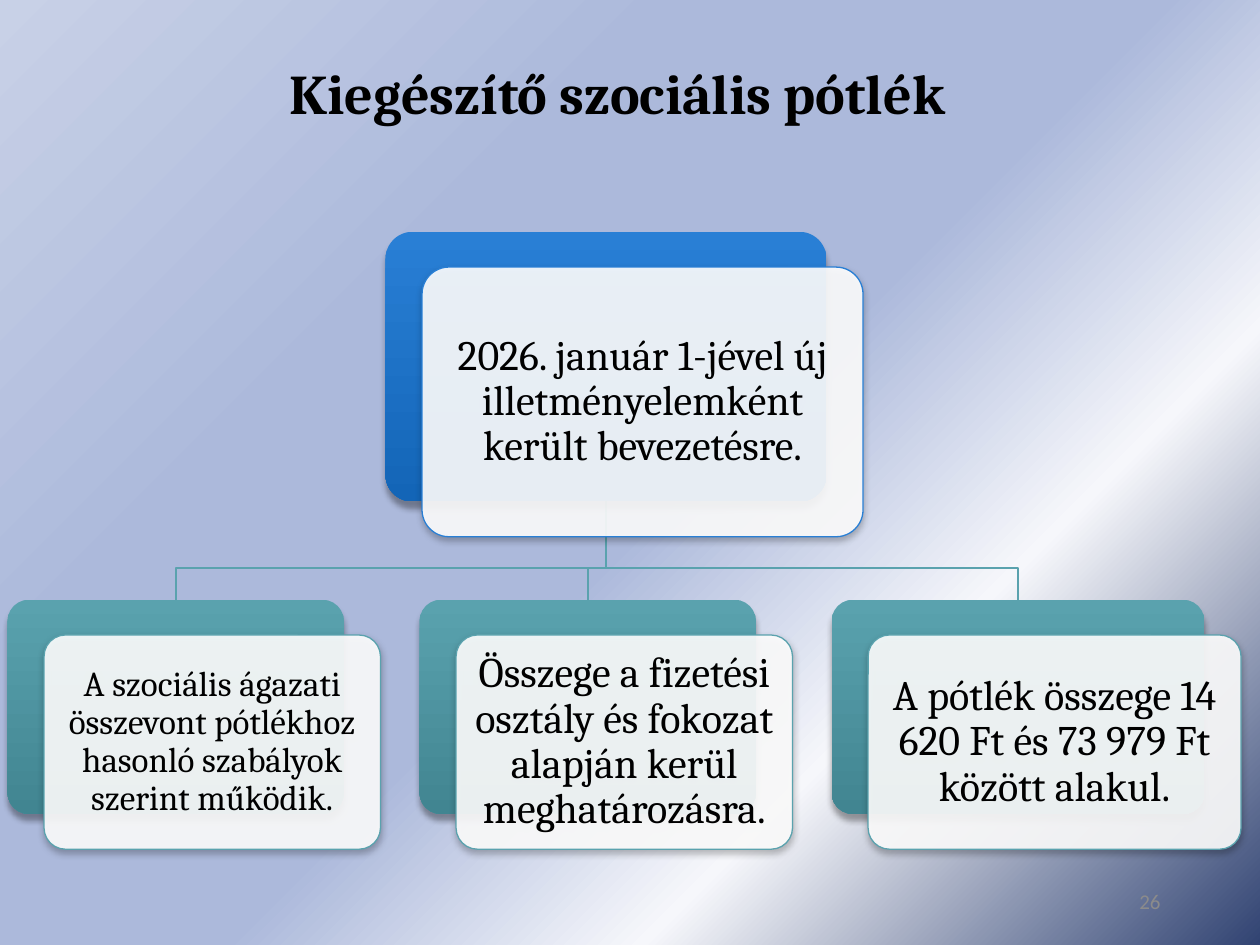
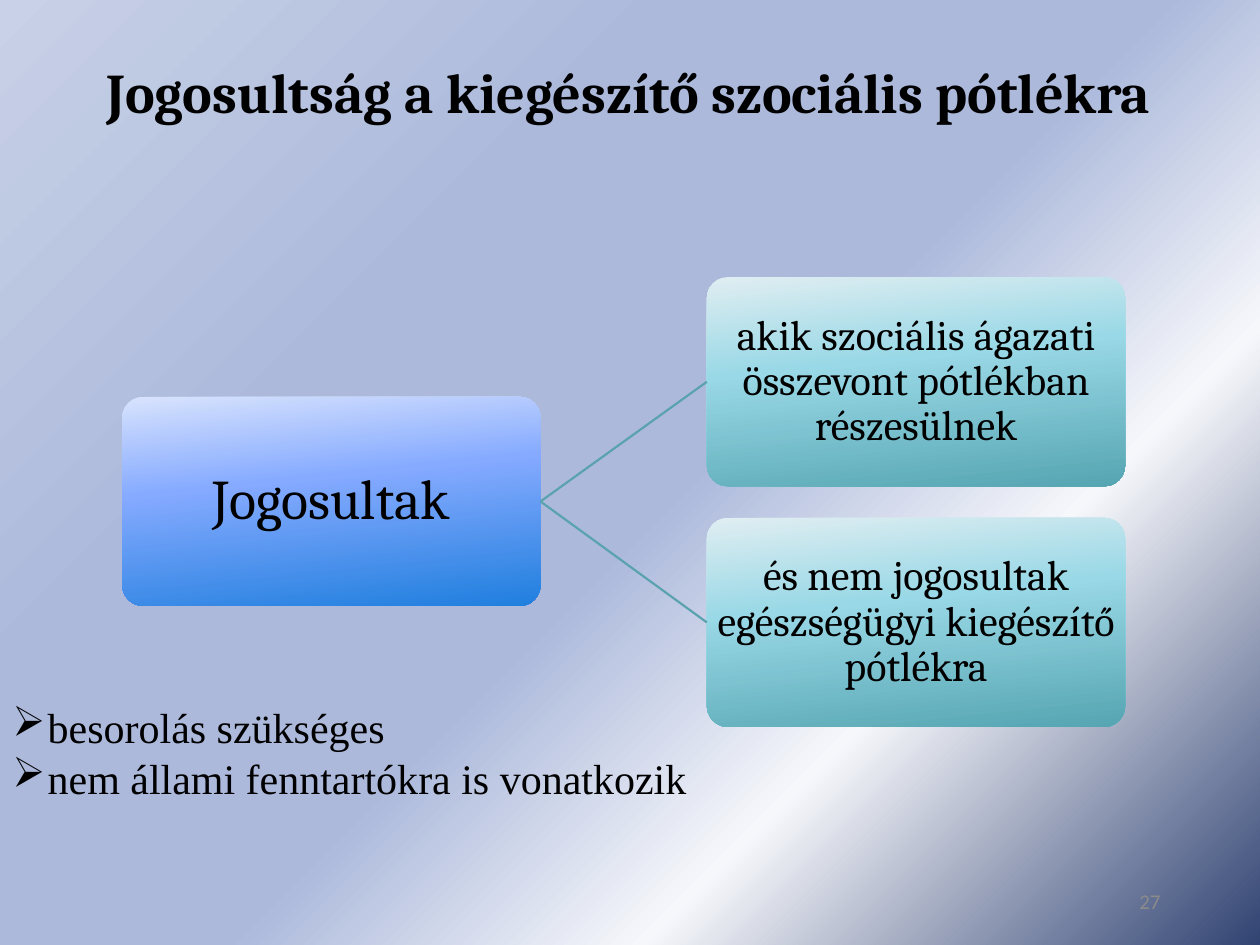
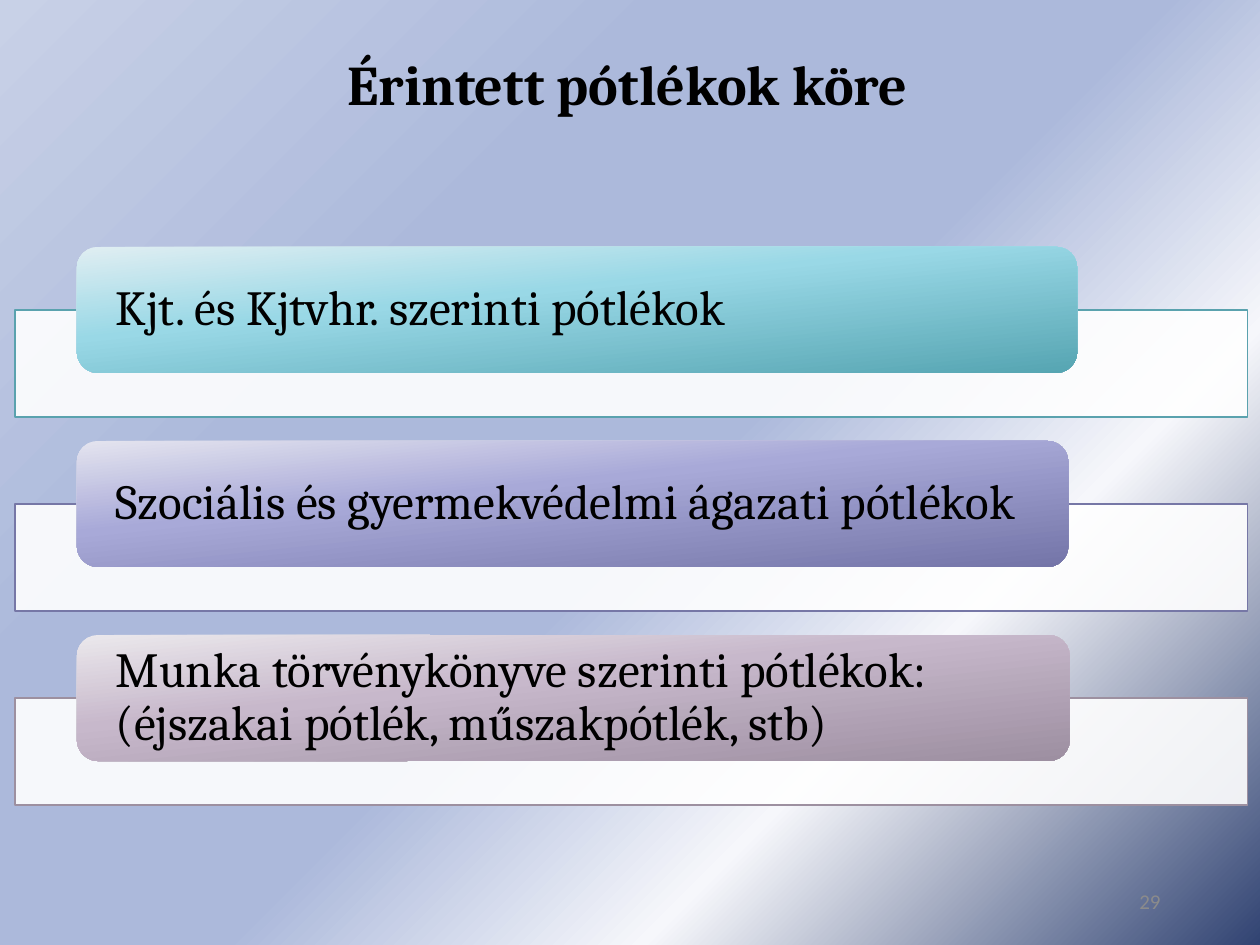
from lxml import etree
from pptx import Presentation
from pptx.dml.color import RGBColor
from pptx.enum.shapes import MSO_CONNECTOR, MSO_SHAPE
from pptx.enum.text import MSO_ANCHOR, MSO_AUTO_SIZE, PP_ALIGN
from pptx.oxml import parse_xml
from pptx.oxml.ns import nsdecls, qn
from pptx.util import Inches, Pt

BLACK = RGBColor(0x00, 0x00, 0x00)
WHITE = RGBColor(0xFF, 0xFF, 0xFF)
GRAY = RGBColor(0x8B, 0x8B, 0x8B)
BLUE = RGBColor(0x29, 0x7F, 0xD5)
DARK_BLUE = RGBColor(0x13, 0x65, 0xB7)
TEAL = RGBColor(0x5A, 0xA2, 0xAE)
DARK_TEAL = RGBColor(0x41, 0x85, 0x91)
VIOLET = RGBColor(0x76, 0x77, 0xA6)
MAUVE = RGBColor(0x9D, 0x90, 0xA0)


def three_stops(*colors):
    return list(zip((0, 40, 100), map(RGBColor.from_string, colors)))


BLUE_GLOSS = three_stops("D8E3FD", "85AAFF", "207FDE")
TEAL_GLOSS = three_stops("E0EEF2", "99D8E6", "56A5B2")
VIOLET_GLOSS = three_stops("E4E4EF", "A8A9D8", "7475A8")
MAUVE_GLOSS = three_stops("EBE8EC", "C7B8CB", "9D8FA1")
BACKGROUND_STOPS = [
    (0, RGBColor(0x31, 0x43, 0x72)),
    (28, RGBColor(0xF6, 0xF7, 0xFB)),
    (47, RGBColor(0xAC, 0xB9, 0xDB)),
    (69, RGBColor(0xAC, 0xB9, 0xDB)),
    (100, RGBColor(0xC8, 0xD1, 0xE7)),
]
FROM_CORNER = (
    '<a:path path="circle"><a:fillToRect l="100000" t="100000"/></a:path>'
    '<a:tileRect r="-100000" b="-100000"/>'
)
HEADING_FONT = "Cambria"
CARD_OFFSET = (0.29, 0.28)
CARD_ROUNDING = 0.1


def set_alpha(color_element, percent):
    etree.SubElement(color_element, qn("a:alpha"), val=str(percent * 1000))


def set_gradient(fill, parent, stops, direction):
    """Give the fill any number of stops; parent is the XML element that holds it."""
    fill.gradient()
    stop_xml = "".join(
        f'<a:gs pos="{position * 1000}"><a:srgbClr val="{color}"/></a:gs>'
        for position, color in stops
    )
    gradient = parse_xml(
        f'<a:gradFill {nsdecls("a")} rotWithShape="1">'
        f"<a:gsLst>{stop_xml}</a:gsLst>{direction}</a:gradFill>"
    )
    placed = next(parent.iter(qn("a:gradFill")))
    placed.getparent().replace(placed, gradient)
    return gradient


def set_background(master):
    gradient = set_gradient(
        master.background.fill, master.element, BACKGROUND_STOPS, FROM_CORNER
    )
    set_alpha(next(gradient.iter(qn("a:srgbClr"))), 87)


def add_shadow(shape, alpha, blur, distance):
    effects = shape._element.spPr.find(qn("a:effectLst"))
    shadow = etree.SubElement(
        effects, qn("a:outerShdw"), blurRad=str(Pt(blur)), dist=str(Pt(distance)),
        dir="5400000", rotWithShape="0",
    )
    set_alpha(etree.SubElement(shadow, qn("a:srgbClr"), val=str(BLACK)), alpha)


def add_block(slide, kind, box, rounding=None):
    shape = slide.shapes.add_shape(kind, *map(Inches, box))
    if rounding is not None:
        shape.adjustments[0] = rounding
    shape.line.fill.background()
    shape.shadow.inherit = False
    return shape


def add_gradient_block(slide, box, stops, angle, rounding=None):
    shape = add_block(slide, MSO_SHAPE.ROUNDED_RECTANGLE, box, rounding)
    direction = f'<a:lin ang="{angle * 60000}" scaled="0"/>'
    set_gradient(shape.fill, shape._element.spPr, stops, direction)
    return shape


def add_white_block(slide, kind, box, line_color, rounding=None):
    shape = add_block(slide, kind, box, rounding)
    shape.fill.solid()
    shape.fill.fore_color.rgb = WHITE
    set_alpha(next(shape._element.spPr.iter(qn("a:srgbClr"))), 90)
    shape.line.color.rgb = line_color
    shape.line.width = Pt(0.75)
    return shape


def write(shape, text, size, bold=False, align=PP_ALIGN.CENTER, margins=(0.1, 0.05)):
    """Fill the shape with one paragraph; margins are horizontal and vertical."""
    frame = shape.text_frame
    frame.word_wrap = True
    frame.auto_size = MSO_AUTO_SIZE.NONE
    frame.vertical_anchor = MSO_ANCHOR.MIDDLE
    frame.margin_left = frame.margin_right = Inches(margins[0])
    frame.margin_top = frame.margin_bottom = Inches(margins[1])
    frame.text = text
    paragraph = frame.paragraphs[0]
    paragraph.alignment = align
    paragraph.line_spacing = 0.9
    font = paragraph.font
    font.name, font.size, font.bold = HEADING_FONT, Pt(size), bold
    font.color.rgb = BLACK


def add_titled_slide(presentation, title, left, top, number):
    slide = presentation.slides.add_slide(presentation.slide_layouts[5])
    placeholder = slide.shapes.title
    placeholder.left, placeholder.top = Inches(left), Inches(top)
    placeholder.width, placeholder.height = Inches(8.62), Inches(1.09)
    write(placeholder, title, 32, bold=True)

    number_box = slide.shapes.add_textbox(*map(Inches, (7.06, 6.95, 2.25, 0.4)))
    number_box.text_frame.vertical_anchor = MSO_ANCHOR.MIDDLE
    number_box.text_frame.text = str(number)
    paragraph = number_box.text_frame.paragraphs[0]
    paragraph.alignment = PP_ALIGN.RIGHT
    paragraph.font.name, paragraph.font.size = "Calibri", Pt(12)
    paragraph.font.color.rgb = GRAY
    return slide


def add_card(slide, box, text, size, color, dark_color):
    """Draw a coloured back plate with a white text plate shifted over it."""
    left, top, width, height = box
    back = add_gradient_block(
        slide, box, [(0, color), (100, dark_color)], 90, CARD_ROUNDING
    )
    add_shadow(back, 34, 3.5, 4)
    front_box = (left + CARD_OFFSET[0], top + CARD_OFFSET[1], width, height)
    front = add_white_block(
        slide, MSO_SHAPE.ROUNDED_RECTANGLE, front_box, color, CARD_ROUNDING
    )
    add_shadow(front, 28, 4, 2)
    write(front, text, size, margins=(size / 240, size / 240))


def add_branch(slide, parent_box, child_box):
    """Draw the bent line from under the parent to the top of the child."""
    start_x = parent_box[0] + parent_box[2] / 2
    start_y = parent_box[1] + parent_box[3]
    end_x = child_box[0] + child_box[2] / 2
    end_y = child_box[1]
    bend_y = end_y - 0.25
    builder = slide.shapes.build_freeform(Inches(start_x), Inches(start_y))
    points = [(start_x, bend_y), (end_x, bend_y), (end_x, end_y)]
    builder.add_line_segments([tuple(map(Inches, point)) for point in points], close=False)
    branch = builder.convert_to_shape()
    branch.fill.background()
    branch.line.color.rgb = TEAL
    branch.line.width = Pt(1.25)
    branch.shadow.inherit = False


def add_link(slide, parent, child):
    link = slide.shapes.add_connector(MSO_CONNECTOR.STRAIGHT, 0, 0, 0, 0)
    link.begin_connect(parent, 3)
    link.end_connect(child, 1)
    link.line.color.rgb = TEAL
    link.line.width = Pt(1.25)
    etree.SubElement(link._element.spPr, qn("a:effectLst"))


def add_arrow_list(slide, box, items):
    frame = slide.shapes.add_textbox(*map(Inches, box)).text_frame
    frame.word_wrap = True
    frame.text = "\n".join(items)
    for paragraph in frame.paragraphs:
        properties = paragraph._p.get_or_add_pPr()
        properties.set("marL", str(Inches(0.28)))
        properties.set("indent", str(Inches(-0.28)))
        etree.SubElement(properties, qn("a:buChar"), char="➢")
        paragraph.font.name, paragraph.font.size = "Times New Roman", Pt(24)
        paragraph.font.color.rgb = BLACK


def build_supplement_slide(presentation):
    slide = add_titled_slide(presentation, "Kiegészítő szociális pótlék", 0.59, 0.22, 26)
    root_box = (3.06, 1.84, 3.5, 2.14)
    details = [
        ("A szociális ágazati összevont pótlékhoz hasonló szabályok szerint működik.",
         20, 2.67),
        ("Összege a fizetési osztály és fokozat alapján kerül meghatározásra.", 24, 2.67),
        ("A pótlék összege 14 620 Ft és 73 979 Ft között alakul.", 24, 2.96),
    ]
    boxes = [
        (0.06 + 3.27 * column, 4.76, width, 1.7)
        for column, (_, _, width) in enumerate(details)
    ]
    for box in boxes:
        add_branch(slide, root_box, box)
    add_card(slide, root_box,
             "2026. január 1-jével új illetményelemként került bevezetésre.",
             24, BLUE, DARK_BLUE)
    for box, (text, size, _) in zip(boxes, details):
        add_card(slide, box, text, size, TEAL, DARK_TEAL)


def build_entitlement_slide(presentation):
    slide = add_titled_slide(
        presentation, "Jogosultság a kiegészítő szociális pótlékra", 0.68, 0.21, 27
    )

    def add_node(left, top, text, size, stops):
        node = add_gradient_block(
            slide, (left, top, 3.32, 1.66), stops, 84, CARD_ROUNDING
        )
        write(node, text, size, margins=(0.02, 0.02))
        return node

    root = add_node(0.97, 3.15, "Jogosultak", 32, BLUE_GLOSS)
    conditions = [
        "akik szociális ágazati összevont pótlékban részesülnek",
        "és nem jogosultak egészségügyi kiegészítő pótlékra",
    ]
    for row, text in enumerate(conditions):
        condition = add_node(5.61, 2.2 + 1.91 * row, text, 24, TEAL_GLOSS)
        add_link(slide, root, condition)
    add_arrow_list(slide, (0, 5.52, 5.85, 0.91),
                   ["besorolás szükséges", "nem állami fenntartókra is vonatkozik"])


def build_scope_slide(presentation):
    slide = add_titled_slide(presentation, "Érintett pótlékok köre", 0.67, 0.15, 29)
    groups = [
        ("Kjt. és Kjtvhr. szerinti pótlékok", 7.94, TEAL, TEAL_GLOSS),
        ("Szociális és gyermekvédelmi ágazati pótlékok", 7.87, VIOLET, VIOLET_GLOSS),
        ("Munka törvénykönyve szerinti pótlékok: (éjszakai pótlék, műszakpótlék, stb)",
         7.88, MAUVE, MAUVE_GLOSS),
    ]
    for row, (text, width, line_color, stops) in enumerate(groups):
        top = 1.96 + 1.54 * row
        add_white_block(slide, MSO_SHAPE.RECTANGLE, (0.12, top + 0.5, 9.78, 0.85), line_color)
        label = add_gradient_block(slide, (0.61, top, width, 1), stops, 84)
        write(label, text, 28, align=PP_ALIGN.LEFT, margins=(0.26, 0))


def main():
    presentation = Presentation()
    presentation.slide_width, presentation.slide_height = Inches(10), Inches(7.5)
    set_background(presentation.slide_master)
    build_supplement_slide(presentation)
    build_entitlement_slide(presentation)
    build_scope_slide(presentation)
    presentation.save("out.pptx")


if __name__ == "__main__":
    main()
